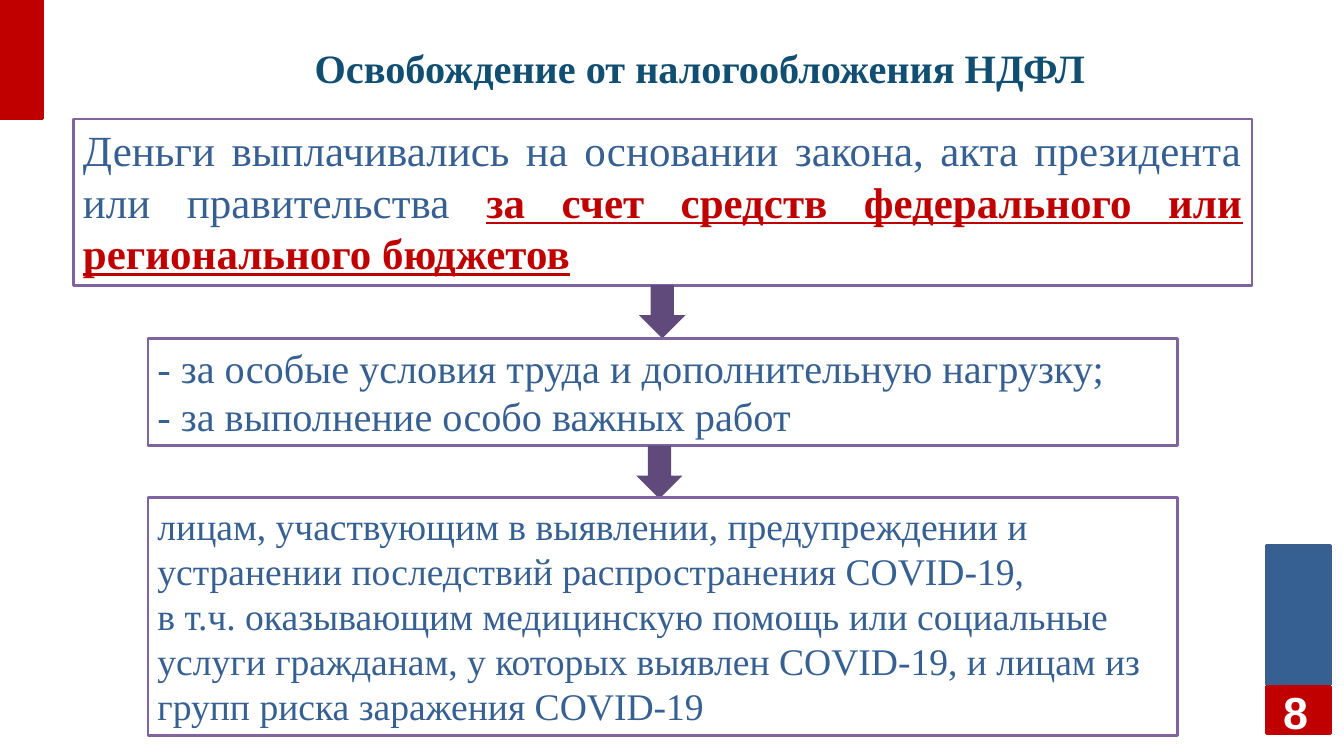
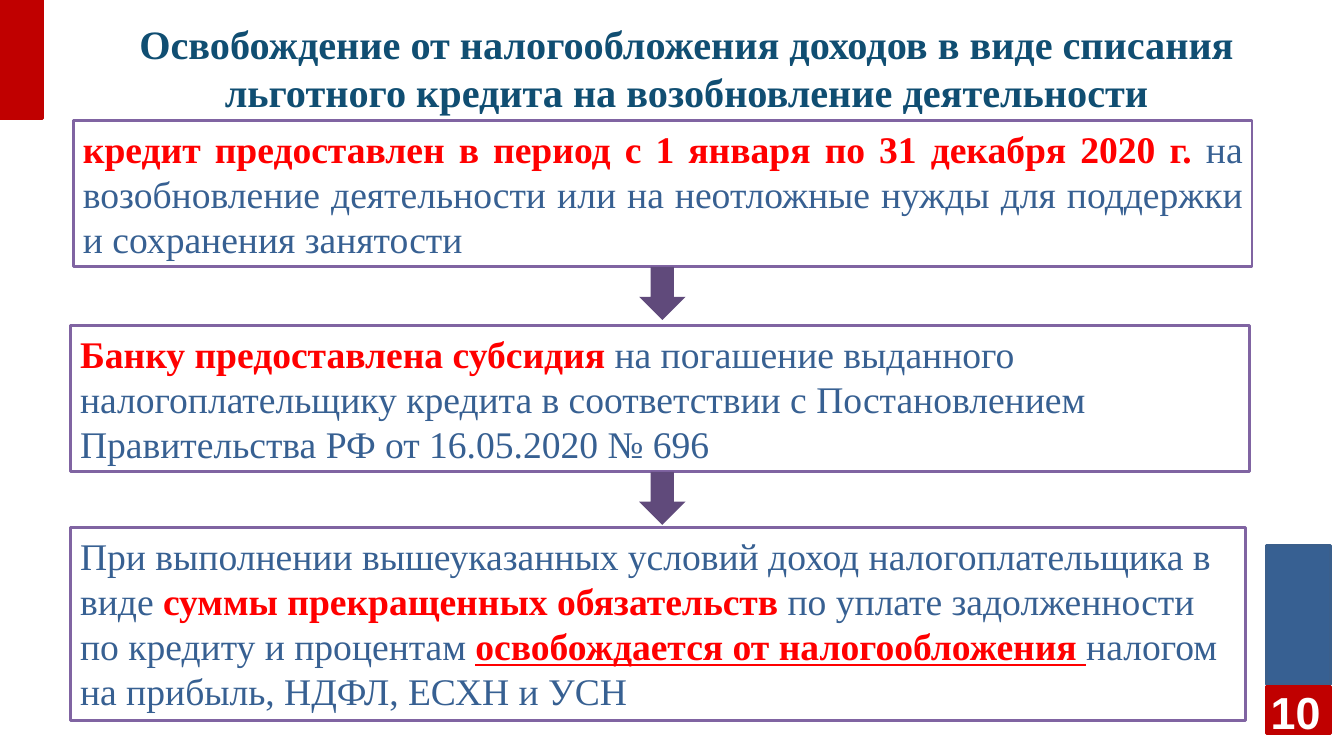
from dataclasses import dataclass
from typing import NamedTuple, Optional

import pptx
import pptx.dml.color
import pptx.enum.shapes
import pptx.enum.text
import pptx.util

Inches = pptx.util.Inches
Pt = pptx.util.Pt
Shapes = pptx.enum.shapes.MSO_SHAPE
Align = pptx.enum.text.PP_ALIGN
Anchor = pptx.enum.text.MSO_ANCHOR

WHITE = "FFFFFF"
BLUE = "376092"
BLUE_EDGE = "3A5F8C"
DARK_RED = "C00000"
BRIGHT_RED = "FF0000"
TITLE_COLOUR = "104E72"
BOX_EDGE = "8064A2"
ARROW_FILL = "604A7B"
BODY_FONT = "Times New Roman"
NUMBER_FONT = "Arial"
ARROW_WIDTH = 0.48
ARROW_HEIGHT = 0.55


class Area(NamedTuple):
    left: float
    top: float
    width: float
    height: float


class Span(NamedTuple):
    text: str
    colour: str = BLUE
    bold: bool = False
    underline: bool = False


class Band(NamedTuple):
    area: Area
    fill: str
    edge: str


@dataclass
class Step:
    """A framed text, with an arrow below it when arrow_left is given."""
    area: Area
    size: float
    paragraphs: list[list[Span]]
    align: Align = Align.LEFT
    arrow_left: Optional[float] = None


@dataclass
class Page:
    number: int
    title: str
    title_width: float
    steps: list[Step]


BANDS = [
    Band(Area(13.1, 5.64, 0.66, 1.44), BLUE, BLUE_EDGE),
    Band(Area(13.1, 7.1, 0.66, 0.49), DARK_RED, DARK_RED),
    Band(Area(0, 0, 0.44, 1.23), DARK_RED, DARK_RED),
]

PAGES = [
    Page(8, "Освобождение от налогообложения НДФЛ", 13.32, [
        Step(Area(0.76, 1.23, 12.19, 1.72), 32, [[
            Span("Деньги выплачивались на основании закона, акта президента "
                 "или правительства "),
            Span("за счет средств федерального или регионального бюджетов",
                 DARK_RED, True, True),
        ]], Align.JUSTIFY, 6.61),
        Step(Area(1.53, 3.5, 10.65, 1.11), 30, [
            [Span("- за особые условия труда и дополнительную нагрузку;")],
            [Span("- за выполнение особо важных работ")],
        ], arrow_left=6.58),
        Step(Area(1.53, 5.15, 10.65, 2.46), 28, [
            [Span("лицам, участвующим в выявлении, предупреждении и устранении "
                  "последствий распространения COVID-19,")],
            [Span("в т.ч. оказывающим медицинскую помощь или социальные услуги "
                  "гражданам, у которых выявлен COVID-19, и лицам из групп "
                  "риска заражения COVID-19")],
        ]),
    ]),
    Page(10, "Освобождение от налогообложения доходов в виде списания "
             "льготного кредита на возобновление деятельности", 13.05, [
        Step(Area(0.76, 1.25, 12.19, 1.51), 28, [[
            Span("кредит предоставлен в период с 1 января по 31 декабря 2020 г. ",
                 BRIGHT_RED, True),
            Span("на возобновление деятельности или на неотложные нужды для "
                 "поддержки и сохранения занятости"),
        ]], Align.JUSTIFY, 6.61),
        Step(Area(0.73, 3.37, 12.19, 1.51), 28, [[
            Span("Банку предоставлена субсидия ", BRIGHT_RED, True),
            Span("на погашение выданного налогоплательщику кредита в "
                 "соответствии с Постановлением Правительства РФ от "
                 "16.05.2020 № 696"),
        ]], arrow_left=6.61),
        Step(Area(0.73, 5.46, 12.15, 1.99), 28, [[
            Span("При выполнении вышеуказанных условий доход "
                 "налогоплательщика в виде "),
            Span("суммы прекращенных обязательств ", BRIGHT_RED, True),
            Span("по уплате задолженности по кредиту и процентам "),
            Span("освобождается от налогообложения ", BRIGHT_RED, True, True),
            Span("налогом на прибыль, НДФЛ, ЕСХН и УСН"),
        ]]),
    ]),
]


def colour(hex_value: str) -> pptx.dml.color.RGBColor:
    return pptx.dml.color.RGBColor.from_string(hex_value)


def lengths(area: Area) -> list[pptx.util.Length]:
    return [Inches(value) for value in area]


def add_block(slide, kind: Shapes, area: Area, fill: str,
              edge: Optional[str] = None):
    """Add a flat preset shape, outlined only when an edge colour is given."""
    shape = slide.shapes.add_shape(kind, *lengths(area))
    shape.shadow.inherit = False
    shape.fill.solid()
    shape.fill.fore_color.rgb = colour(fill)
    if edge:
        shape.line.color.rgb = colour(edge)
        shape.line.width = Pt(2)
    else:
        shape.line.fill.background()
    return shape


def write_spans(paragraph, spans: list[Span], size: float, font: str,
                align: Align) -> None:
    paragraph.alignment = align
    for span in spans:
        run = paragraph.add_run()
        run.text = span.text
        run.font.name = font
        run.font.size = Pt(size)
        run.font.bold = span.bold
        run.font.underline = span.underline
        run.font.color.rgb = colour(span.colour)


def add_label(slide, area: Area, span: Span, size: float, font: str) -> None:
    """Add centred text without side margins."""
    text_frame = slide.shapes.add_textbox(*lengths(area)).text_frame
    text_frame.word_wrap = True
    text_frame.vertical_anchor = Anchor.MIDDLE
    text_frame.margin_left = text_frame.margin_right = 0
    write_spans(text_frame.paragraphs[0], [span], size, font, Align.CENTER)


def add_step(slide, step: Step) -> None:
    box = add_block(slide, Shapes.RECTANGLE, step.area, WHITE, BOX_EDGE)
    text_frame = box.text_frame
    text_frame.word_wrap = True
    text_frame.vertical_anchor = Anchor.TOP
    text_frame.auto_size = pptx.enum.text.MSO_AUTO_SIZE.SHAPE_TO_FIT_TEXT
    for index, spans in enumerate(step.paragraphs):
        paragraph = (text_frame.add_paragraph() if index
                     else text_frame.paragraphs[0])
        write_spans(paragraph, spans, step.size, BODY_FONT, step.align)
    if step.arrow_left is not None:
        bottom = step.area.top + step.area.height
        add_block(slide, Shapes.DOWN_ARROW,
                  Area(step.arrow_left, bottom, ARROW_WIDTH, ARROW_HEIGHT),
                  ARROW_FILL)


def add_page(presentation, page: Page) -> None:
    slide = presentation.slides.add_slide(presentation.slide_layouts[6])
    for band in BANDS:
        add_block(slide, Shapes.RECTANGLE, band.area, band.fill, band.edge)
    add_label(slide, Area(0.58, 0.13, page.title_width, 1.14),
              Span(page.title, TITLE_COLOUR, True), 30, BODY_FONT)
    add_label(slide, Area(13.11, 7.15, 0.58, 0.42),
              Span(str(page.number), WHITE, True), 33.4, NUMBER_FONT)
    for step in page.steps:
        add_step(slide, step)


def main() -> None:
    presentation = pptx.Presentation()
    presentation.slide_width = Inches(13.9)
    presentation.slide_height = Inches(7.82)
    for page in PAGES:
        add_page(presentation, page)
    presentation.save("out.pptx")


if __name__ == "__main__":
    main()
